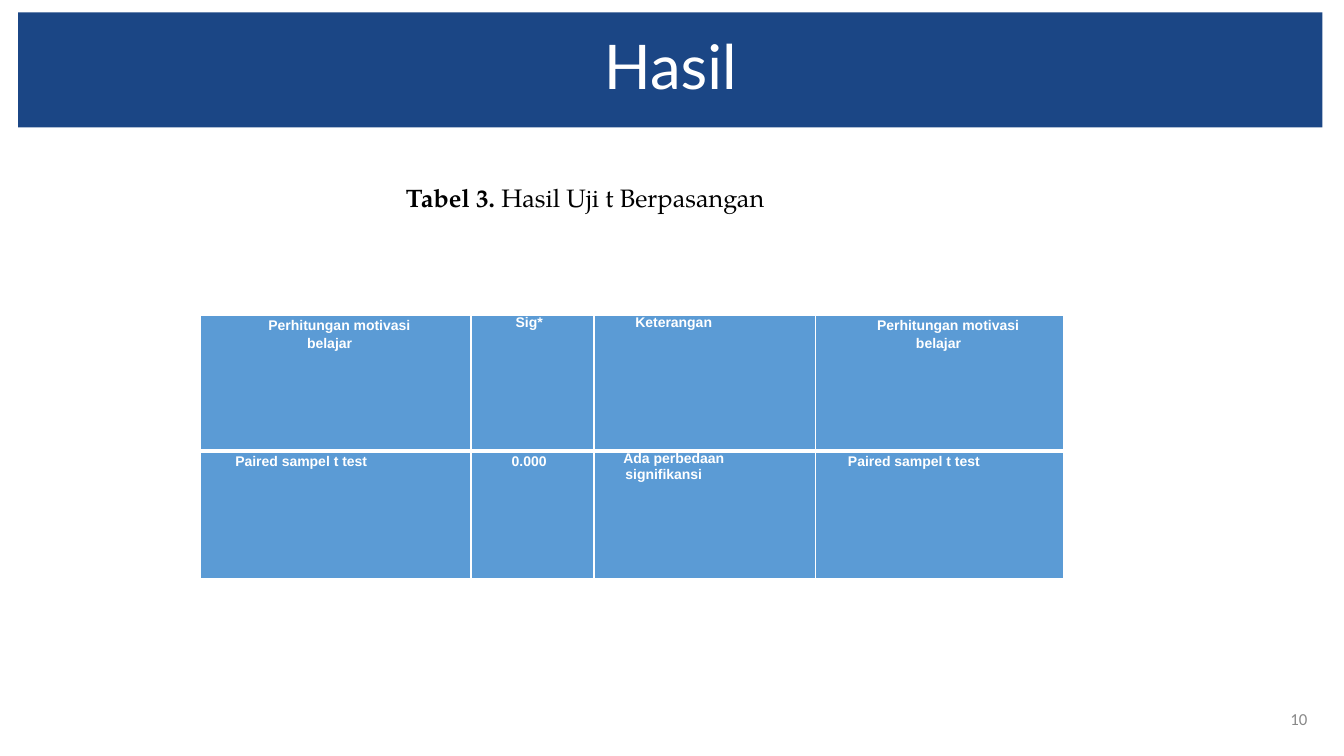
from dataclasses import dataclass
from typing import Optional

from lxml.etree import SubElement
from pptx import Presentation
from pptx.dml.color import RGBColor
from pptx.enum.shapes import MSO_SHAPE
from pptx.enum.text import MSO_ANCHOR, PP_ALIGN
from pptx.oxml.ns import qn
from pptx.util import Cm, Pt

COLORS = {
    "banner": "1B4685",
    "cell": "5B9BD5",
    "white": "FFFFFF",
    "black": "000000",
    "page": "888888",
}
COLUMN_WIDTHS = [6.83, 3.1, 5.59, 6.25]
ROW_HEIGHTS = [3.43, 3.2]


@dataclass
class Line:
    text: str
    left: float
    right: float = 0
    align: PP_ALIGN = PP_ALIGN.LEFT
    spacing: Optional[float] = None
    before: float = 0
    hanging: float = 0


def heading(left: float, lower_left: float, right: float) -> list[Line]:
    return [
        Line("Perhitungan motivasi", left, right, PP_ALIGN.CENTER, 13.4, 0.1),
        Line("belajar", lower_left, right, PP_ALIGN.CENTER, 12.6),
    ]


RESULTS = [
    [
        heading(0.69, 0.2, 0.5),
        [Line("Sig*", 0.53, 0.7, PP_ALIGN.CENTER, before=0.1)],
        [Line("Keterangan", 1.04, before=0.1)],
        heading(0.61, 0.13, 0.2),
    ],
    [
        [Line("Paired sampel t test", 0.89, spacing=13.4)],
        [Line("0.000", 0.53, 0.7, PP_ALIGN.CENTER, 13.4)],
        [Line("Ada perbedaan signifikansi", 0.79, 2, hanging=0.05)],
        [Line("Paired sampel t test", 0.81, spacing=13.4)],
    ],
]


def rgb(name: str) -> RGBColor:
    return RGBColor.from_string(COLORS[name])


def style(paragraph, face: str, size: float, color: str) -> None:
    paragraph.font.name = face
    paragraph.font.size = Pt(size)
    paragraph.font.color.rgb = rgb(color)


def add_text(slide, left: float, top: float, width: float, height: float):
    frame = slide.shapes.add_textbox(Cm(left), Cm(top), Cm(width), Cm(height)).text_frame
    frame.word_wrap = True
    return frame


def write_line(paragraph, line: Line) -> None:
    properties = paragraph._p.get_or_add_pPr()
    properties.set("marL", str(Cm(line.left)))
    properties.set("marR", str(Cm(line.right)))
    properties.set("indent", str(-Cm(line.hanging)))
    paragraph.text = line.text
    paragraph.alignment = line.align
    paragraph.space_before = Pt(line.before)
    if line.spacing:
        paragraph.line_spacing = Pt(line.spacing)
    style(paragraph, "Arial", 10, "white")
    paragraph.font.bold = True


def add_borders(cell, top: float, bottom: float) -> None:
    properties = cell._tc.get_or_add_tcPr()
    widths = {"a:lnL": 1, "a:lnR": 1, "a:lnT": top, "a:lnB": bottom}
    for tag, width in widths.items():
        border = SubElement(properties, qn(tag), w=str(Pt(width)))
        fill = SubElement(border, qn("a:solidFill"))
        SubElement(fill, qn("a:srgbClr"), val=COLORS["white"])


def fill_cell(cell, lines: list[Line], top: float, bottom: float) -> None:
    cell.margin_left = cell.margin_right = cell.margin_top = cell.margin_bottom = 0
    add_borders(cell, top, bottom)
    cell.fill.solid()
    cell.fill.fore_color.rgb = rgb("cell")
    frame = cell.text_frame
    for index, line in enumerate(lines):
        write_line(frame.add_paragraph() if index else frame.paragraphs[0], line)


def add_banner(slide) -> None:
    banner = slide.shapes.add_shape(
        MSO_SHAPE.RECTANGLE, Cm(0.46), Cm(0.31), Cm(32.87), Cm(2.9)
    )
    banner.shadow.inherit = False
    banner.fill.solid()
    banner.fill.fore_color.rgb = rgb("banner")
    banner.line.fill.background()
    banner.text_frame.vertical_anchor = MSO_ANCHOR.MIDDLE
    title = banner.text_frame.paragraphs[0]
    title.text = "Hasil"
    title.alignment = PP_ALIGN.CENTER
    title.line_spacing = 0.9
    style(title, "Lato", 44, "white")


def add_caption(slide) -> None:
    caption = add_text(slide, 9.98, 4.55, 12, 1).paragraphs[0]
    label = caption.add_run()
    label.text = "Tabel 3. "
    label.font.bold = True
    caption.add_run().text = "Hasil Uji t Berpasangan"
    caption.line_spacing = 0.9
    style(caption, "TeX Gyre Pagella", 18, "black")


def add_results(slide) -> None:
    table = slide.shapes.add_table(
        len(ROW_HEIGHTS), len(COLUMN_WIDTHS), Cm(5.04), Cm(7.94),
        Cm(sum(COLUMN_WIDTHS)), Cm(sum(ROW_HEIGHTS)),
    ).table
    table.first_row = table.horz_banding = False
    for column, width in zip(table.columns, COLUMN_WIDTHS):
        column.width = Cm(width)
    for row, height in zip(table.rows, ROW_HEIGHTS):
        row.height = Cm(height)
    for r, cells in enumerate(RESULTS):
        top, bottom = (1, 3) if r == 0 else (3, 1)
        for c, lines in enumerate(cells):
            fill_cell(table.cell(r, c), lines, top, bottom)


def add_page_number(slide) -> None:
    frame = add_text(slide, 31.75, 17.6, 1.45, 1.02)
    frame.vertical_anchor = MSO_ANCHOR.MIDDLE
    number = frame.paragraphs[0]
    number.text = "10"
    number.alignment = PP_ALIGN.RIGHT
    style(number, "Calibri", 12, "page")


def main() -> None:
    deck = Presentation()
    deck.slide_width, deck.slide_height = Cm(33.87), Cm(19.05)
    slide = deck.slides.add_slide(deck.slide_layouts[6])
    add_page_number(slide)
    add_banner(slide)
    add_caption(slide)
    add_results(slide)
    deck.save("out.pptx")


if __name__ == "__main__":
    main()
